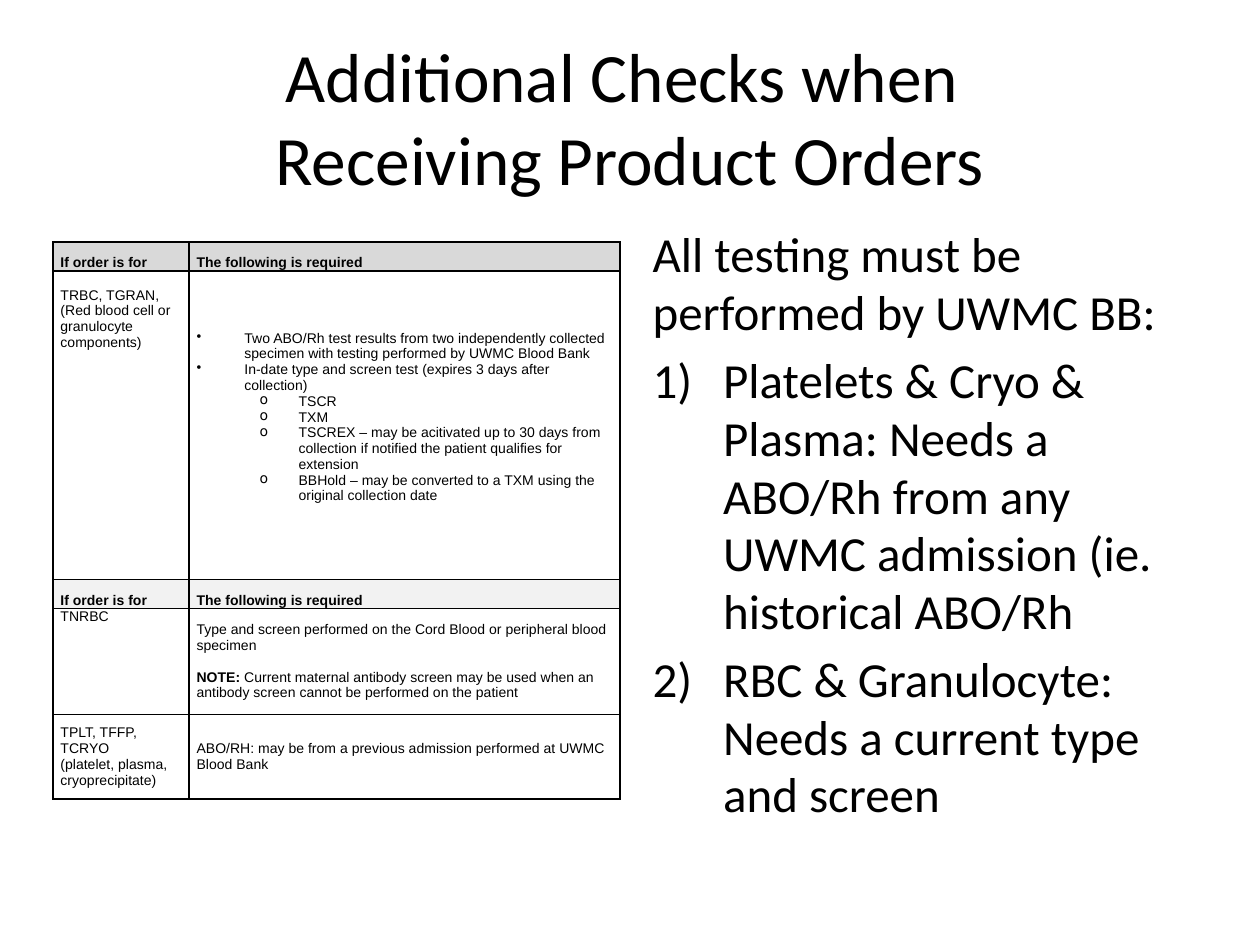
from pptx import Presentation
from pptx.dml.color import RGBColor as Rgb
from pptx.enum.text import MSO_ANCHOR as Anchor, MSO_AUTO_SIZE as Auto, PP_ALIGN as Align
from pptx.oxml import parse_xml
from pptx.oxml.ns import nsdecls
from pptx.util import Inches, Pt

COLORS = {"ink": "000000", "head": "D9D9D9", "sub": "F2F2F2"}
TITLE = "Additional Checks when \vReceiving Product Orders"
POINTS = [
    ("All testing must be performed by UWMC BB:", False),
    ("Platelets & Cryo & Plasma: Needs a ABO/Rh from any UWMC admission (ie. historical ABO/Rh", True),
    ("RBC & Granulocyte: Needs a current type and screen", True),
]
HEADS = ["If order is for", "The following is required"]
NEEDS = [
    ("•", "Two ABO/Rh test results from two independently collected specimen with testing performed by UWMC Blood Bank"),
    ("•", "In-date type and screen test (expires 3 days after collection)"),
    ("o", "TSCR"),
    ("o", "TXM"),
    ("o", "TSCREX – may be acitivated up to 30 days from collection if notified the patient qualifies for extension"),
    ("o", "BBHold – may be converted to a TXM using the original collection date"),
]
CORD = [
    ("", "Type and screen performed on the Cord Blood or peripheral blood specimen"),
    ("", "NOTE:", " Current maternal antibody screen may be used when an antibody screen cannot be performed on the patient"),
]
PLATE = [("", "TPLT, TFFP, TCRYO"), ("", "(platelet, plasma, cryoprecipitate)")]
PRIOR = "ABO/RH: may be from a previous admission performed at UWMC Blood Bank"
TOP, MID, LOW = Anchor.TOP, Anchor.MIDDLE, Anchor.BOTTOM
ROWS = [
    (0.23, "head", [(HEADS[0], LOW, 0, 0), (HEADS[1], LOW, 0, 0)]),
    (2.45, None, [
        ("TRBC, TGRAN, (Red blood cell or granulocyte components)", TOP, 0.13, 0),
        (NEEDS, MID, 0, 0.13)]),
    (0.23, "sub", [(HEADS[0], LOW, 0, 0), (HEADS[1], LOW, 0, 0)]),
    (0.84, None, [("TNRBC", TOP, 0, 0), (CORD, MID, 0, 0)]),
    (0.67, None, [(PLATE, MID, 0, 0), (PRIOR, MID, 0, 0)]),
]
COLS = [1.08, 3.42]
MARKS = {"•": (0.38, 0.38), "o": (0.81, 0.31)}


def color(name):
    return Rgb.from_string(COLORS[name])


def style(font, face, size, bold=False):
    font.name, font.size, font.bold = face, Pt(size), bold
    font.color.rgb = color("ink")


def place(shape, *box):
    shape.left, shape.top, shape.width, shape.height = map(Inches, box)


def mark(para, tag, left=0, hang=0):
    props = para._p.get_or_add_pPr()
    props.set("marL", str(Inches(left)))
    props.set("indent", str(-Inches(hang)))
    props.append(parse_xml(f"<a:{tag} {nsdecls('a')}/>"))
    return props[-1]


def frame(cell):
    props = cell._tc.get_or_add_tcPr()
    for side in "LRTB":
        props.append(parse_xml(
            f'<a:ln{side} {nsdecls("a")} w="{Pt(1)}"><a:solidFill>'
            f'<a:srgbClr val="{COLORS["ink"]}"/></a:solidFill></a:ln{side}>'))


def write(cell, text, anchor, top, low, bold):
    cell.vertical_anchor = anchor
    cell.margin_left = cell.margin_right = Inches(0.06)
    cell.margin_top, cell.margin_bottom = Inches(top), Inches(low)
    items = [("", text)] if isinstance(text, str) else text
    body = cell.text_frame
    body.text = "\n".join(item[1] for item in items)
    for para, (sign, _, *rest) in zip(body.paragraphs, items):
        if sign:
            mark(para, "buChar", *MARKS[sign]).set("char", sign)
        style(para.runs[0].font, "Arial", 8, bold or bool(rest))
        for part in rest:
            para.space_before = Pt(9)
            run = para.add_run()
            run.text = part
            style(run.font, "Arial", 8)


def fill_title(shape):
    place(shape, 0.5, 0.3, 9, 1.25)
    body = shape.text_frame
    body.text = TITLE
    body.auto_size, body.vertical_anchor = Auto.NONE, MID
    para = body.paragraphs[0]
    para.alignment = Align.CENTER
    for run in para.runs:
        style(run.font, "Calibri", 39.6)


def fill_body(shape):
    place(shape, 5.08, 1.75, 4.42, 4.95)
    body = shape.text_frame
    body.text = "\n".join(text for text, _ in POINTS)
    body.auto_size = Auto.NONE
    for i, (para, (_, listed)) in enumerate(zip(body.paragraphs, POINTS)):
        if listed:
            mark(para, "buAutoNum", 0.56, 0.56).set("type", "arabicParenR")
        else:
            mark(para, "buNone")
        para.line_spacing = 0.98
        para.space_before = Pt(6 if i else 0)
        style(para.runs[0].font, "Calibri", 28)


def add_grid(slide):
    high = sum(row[0] for row in ROWS)
    box = map(Inches, (0.42, 1.92, sum(COLS), high))
    table = slide.shapes.add_table(len(ROWS), len(COLS), *box).table
    table.first_row = table.horz_banding = False
    for col, width in zip(table.columns, COLS):
        col.width = Inches(width)
    for row, (height, tint, cells) in zip(table.rows, ROWS):
        row.height = Inches(height)
        for cell, data in zip(row.cells, cells):
            write(cell, *data, bold=bool(tint))
            frame(cell)
            if tint:
                cell.fill.solid()
                cell.fill.fore_color.rgb = color(tint)
            else:
                cell.fill.background()


def main():
    deck = Presentation()
    deck.slide_width, deck.slide_height = Inches(10), Inches(7.5)
    slide = deck.slides.add_slide(deck.slide_layouts[1])
    fill_title(slide.shapes.title)
    add_grid(slide)
    fill_body(slide.placeholders[1])
    deck.save("out.pptx")


if __name__ == "__main__":
    main()
